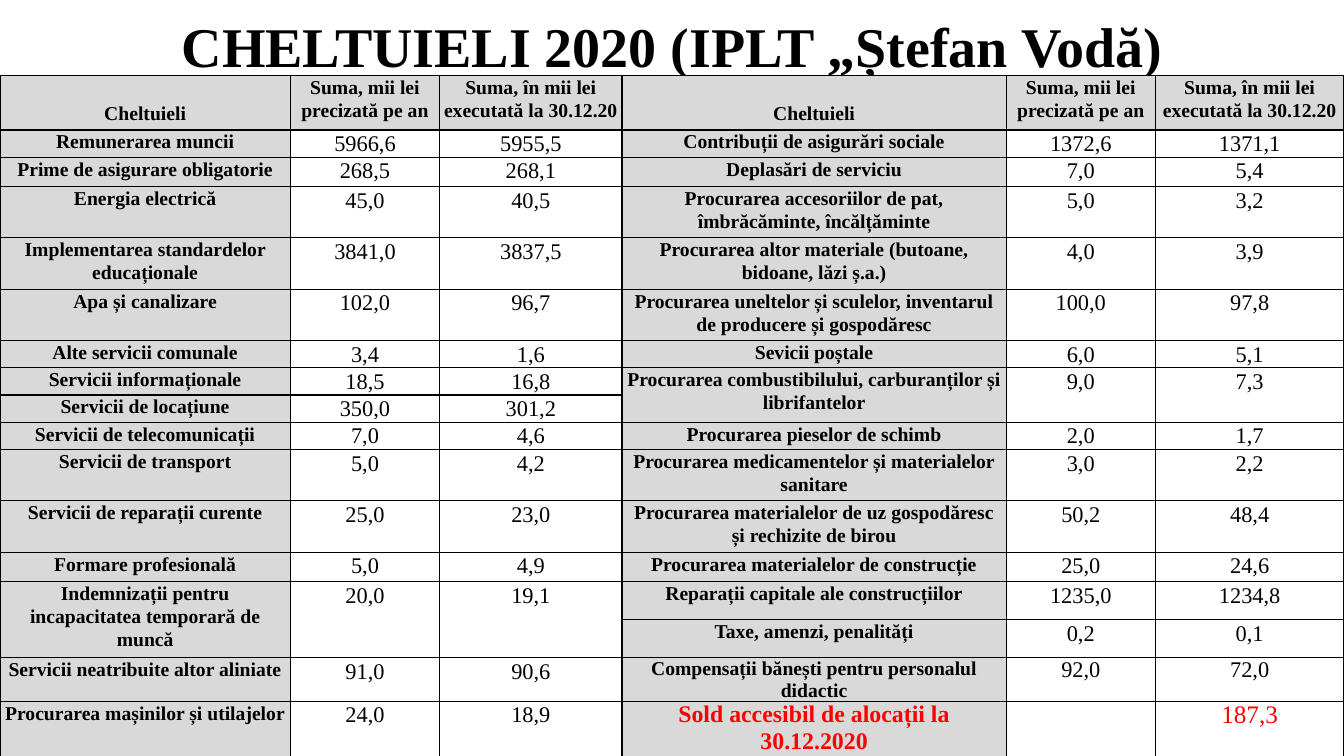
from lxml import etree
from pptx import Presentation
from pptx import util as u
from pptx.dml.color import RGBColor
from pptx.enum import text
from pptx.oxml import ns

TITLE = "CHELTUIELI 2020 (IPLT „Ștefan Vodă)"
HEAD = ["Cheltuieli", "Suma, mii lei\nprecizată pe an", "Suma, în mii lei\nexecutată la 30.12.20"]
COSTS = [
    HEAD * 2,
    ["Remunerarea muncii", "5966,6", "5955,5", "Contribuții de asigurări sociale", "1372,6", "1371,1"],
    ["Prime de asigurare obligatorie", "268,5", "268,1", "Deplasări de serviciu", "7,0", "5,4"],
    ["Energia electrică", "45,0", "40,5",
     "Procurarea accesoriilor de pat, îmbrăcăminte, încălțăminte", "5,0", "3,2"],
    ["Implementarea standardelor educaționale", "3841,0", "3837,5",
     "Procurarea altor materiale (butoane, bidoane, lăzi ș.a.)", "4,0", "3,9"],
    ["Apa și canalizare", "102,0", "96,7",
     "Procurarea uneltelor și sculelor, inventarul de producere și gospodăresc", "100,0", "97,8"],
    ["Alte servicii comunale", "3,4", "1,6", "Sevicii poștale", "6,0", "5,1"],
    ["Servicii informaționale", "18,5", "16,8",
     "Procurarea combustibilului, carburanților și librifantelor", "9,0", "7,3"],
    ["Servicii de locațiune", "350,0", "301,2", None, None, None],
    ["Servicii de telecomunicații", "7,0", "4,6", "Procurarea pieselor de schimb", "2,0", "1,7"],
    ["Servicii de transport", "5,0", "4,2",
     "Procurarea medicamentelor și materialelor sanitare", "3,0", "2,2"],
    ["Servicii de reparații curente", "25,0", "23,0",
     "Procurarea materialelor de uz gospodăresc și rechizite de birou", "50,2", "48,4"],
    ["Formare profesională", "5,0", "4,9", "Procurarea materialelor de construcție", "25,0", "24,6"],
    ["Indemnizații pentru incapacitatea temporară de muncă", "20,0", "19,1",
     "Reparații capitale ale construcțiilor", "1235,0", "1234,8"],
    [None, None, None, "Taxe, amenzi, penalități", "0,2", "0,1"],
    ["Servicii neatribuite altor aliniate", "91,0", "90,6",
     "Compensații bănești pentru personalul didactic", "92,0", "72,0"],
    ["Procurarea mașinilor și utilajelor", "24,0", "18,9",
     "Sold accesibil de alocații la 30.12.2020", "", "187,3"],
]
COLS = [2.88, 1.48, 1.81, 3.81, 1.48, 1.87]
ONE, MID, TWO, HALF = 0.27, 0.29, 0.51, 0.38
ROWS = [0.54, ONE, MID, TWO, TWO, TWO, ONE, ONE, ONE, ONE, TWO, TWO, MID, HALF, HALF, 0.43, 0.57]


def tint(code):
    return RGBColor.from_string(code)


class Deck:
    """Holds the style and the current slide, and draws its elements."""

    font, ink, paper, grey, red = "Times New Roman", "000000", "FFFFFF", "D9D9D9", "FF0000"

    def __init__(self, wide, high):
        self.prs = Presentation()
        self.prs.slide_width, self.prs.slide_height = u.Inches(wide), u.Inches(high)
        self.slide = self.prs.slides.add_slide(self.prs.slide_layouts[5])

    def label(self, frame, words, size, bold, ink, space=None):
        frame.text = words
        for para in frame.paragraphs:
            para.alignment = text.PP_ALIGN.CENTER
            para.line_spacing = space
            for run in para.runs:
                run.font.name, run.font.size, run.font.bold = self.font, u.Pt(size), bold
                run.font.color.rgb = tint(ink)

    def title(self, words, share):
        box = self.slide.shapes.title
        box.left, box.top, box.width = 0, 0, self.prs.slide_width
        box.height = int(self.prs.slide_height * share)
        box.fill.solid()
        box.fill.fore_color.rgb = tint(self.paper)
        self.label(box.text_frame, words, 40, True, self.ink)
        box.text_frame.auto_size = text.MSO_AUTO_SIZE.NONE
        box.text_frame.vertical_anchor = text.MSO_ANCHOR.MIDDLE

    def edge(self, cell):
        props = cell._tc.get_or_add_tcPr()
        for spot, side in enumerate("LRTB"):
            line = etree.Element(ns.qn("a:ln" + side), w=str(u.Pt(1)))
            fill = etree.SubElement(line, ns.qn("a:solidFill"))
            etree.SubElement(fill, ns.qn("a:srgbClr"), val=self.ink)
            props.insert(spot, line)

    def cell(self, cell, words, row, col):
        name, head, last = col % 3 == 0, row == 0, row == len(ROWS) - 1
        cell.margin_left = cell.margin_right = u.Inches(0.04)
        cell.margin_top = cell.margin_bottom = 0
        cell.fill.solid()
        cell.fill.fore_color.rgb = tint(self.grey if name or head else self.paper)
        self.edge(cell)
        if head and name:
            cell.vertical_anchor = text.MSO_ANCHOR.BOTTOM
            cell.margin_bottom = u.Inches(0.05)
        if words:
            bold = name or head
            size, ink = (14 if bold else 16), self.ink
            if last and col > 2:
                size, ink = (17 if name else 18), self.red
            space = None if row >= len(ROWS) - 2 and col > 2 else 1.07
            self.label(cell.text_frame, words, size, bold, ink, space)

    def table(self, data, cols, rows, share):
        top = int(self.prs.slide_height * share)
        grid = self.slide.shapes.add_table(
            len(rows), len(cols), 0, top, u.Inches(sum(cols)), u.Inches(sum(rows))).table
        grid.first_row = grid.horz_banding = False
        for col, wide in zip(grid.columns, cols):
            col.width = u.Inches(wide)
        for row, high in zip(grid.rows, rows):
            row.height = u.Inches(high)
        for r, line in enumerate(data):
            for c, words in enumerate(line):
                self.cell(grid.cell(r, c), words, r, c)
                if words is None:
                    grid.cell(r - 1, c).merge(grid.cell(r, c))


def main():
    deck = Deck(13.33, 7.5)
    deck.title(TITLE, 0.12)
    deck.table(COSTS, COLS, ROWS, 0.1)
    deck.prs.save("out.pptx")


if __name__ == "__main__":
    main()
